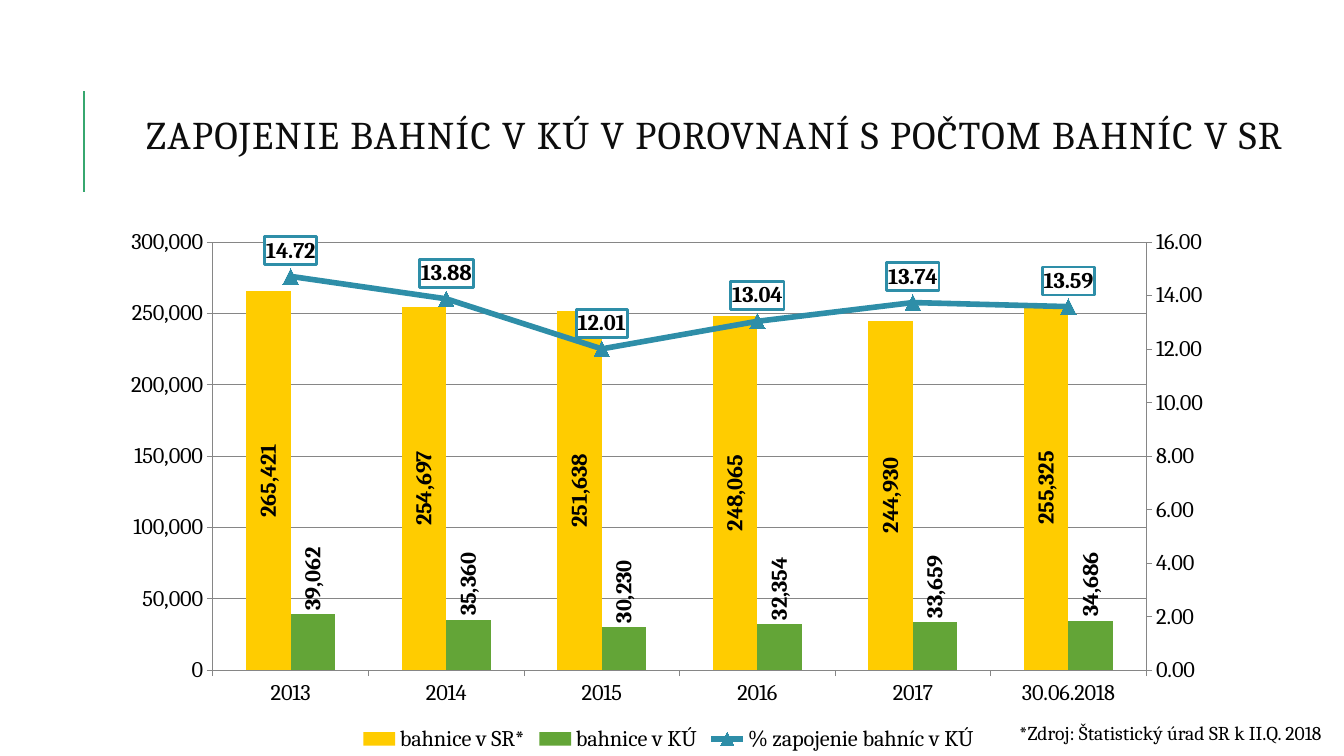
from dataclasses import dataclass
from typing import Optional

from lxml import etree
from pptx import Presentation
from pptx.chart.chart import Chart
from pptx.chart.data import CategoryChartData
from pptx.dml.color import RGBColor
from pptx.enum.chart import XL_CHART_TYPE as ChartType
from pptx.enum.chart import XL_LABEL_POSITION as LabelPos
from pptx.enum.chart import XL_LEGEND_POSITION as LegendPos
from pptx.enum.chart import XL_MARKER_STYLE as Marker
from pptx.enum.chart import XL_TICK_MARK as Tick
from pptx.enum.shapes import MSO_CONNECTOR as Connector
from pptx.enum.text import MSO_ANCHOR as Anchor
from pptx.enum.text import MSO_AUTO_SIZE as AutoSize
from pptx.enum.text import PP_ALIGN as Align
from pptx.oxml import parse_xml
from pptx.oxml.ns import nsdecls, qn
from pptx.util import Inches, Pt


@dataclass(frozen=True)
class Theme:
    font: str = "Cambria"
    title_size: int = 28
    chart_size: int = 16
    note_size: int = 14
    title: str = "0D0D0D"
    text: str = "000000"
    accent: str = "37A76F"
    grid: str = "868686"
    sheep: str = "FFCC00"
    control: str = "63A537"
    share: str = "2E8EA8"
    label_fill: str = "FFFFFF"


@dataclass(frozen=True)
class SeriesSpec:
    name: str
    values: tuple[float, ...]
    color: str
    label_pos: LabelPos
    label_format: str = "#,##0"
    rotation: Optional[int] = None


THEME = Theme()
YEARS = ("2013", "2014", "2015", "2016", "2017", "30.06.2018")
UPRIGHT = -90 * 60000
SERIES = (
    SeriesSpec("bahnice v SR*", (265421, 254697, 251638, 248065, 244930, 255325),
               THEME.sheep, LabelPos.CENTER, rotation=UPRIGHT),
    SeriesSpec("bahnice v KÚ", (39062, 35360, 30230, 32354, 33659, 34686),
               THEME.control, LabelPos.OUTSIDE_END, rotation=UPRIGHT),
    SeriesSpec("% zapojenie bahníc v KÚ", (14.72, 13.88, 12.01, 13.04, 13.74, 13.59),
               THEME.share, LabelPos.ABOVE, "0.00"),
)


def rgb(color: str) -> RGBColor:
    return RGBColor.from_string(color)


def set_font(font, size: int, color: str, bold: bool = False) -> None:
    font.name, font.size, font.bold = THEME.font, Pt(size), bold
    font.color.rgb = rgb(color)


def format_line(line, color: str, width: float) -> None:
    line.color.rgb = rgb(color)
    line.width = Pt(width)


def add_labels(series, spec: SeriesSpec) -> None:
    labels = series.data_labels
    labels.show_value = True
    labels.number_format, labels.number_format_is_linked = spec.label_format, False
    labels.position = spec.label_pos
    set_font(labels.font, THEME.chart_size, THEME.text, bold=True)
    text = labels._element.find(qn("c:txPr"))
    if spec.rotation is not None:
        body = text.find(qn("a:bodyPr"))
        body.set("rot", str(spec.rotation))
        body.set("vert", "horz")
    else:
        text.addprevious(parse_xml(
            f'<c:spPr {nsdecls("c", "a")}><a:solidFill><a:srgbClr val="{THEME.label_fill}"/>'
            f'</a:solidFill><a:ln w="{Pt(2)}"><a:solidFill><a:srgbClr val="{spec.color}"/>'
            '</a:solidFill></a:ln></c:spPr>'))


def move_to_right_axis(chart: Chart) -> None:
    """Turn the last column series into a line on its own axis."""
    ns = nsdecls("c")
    area = chart._chartSpace.chart.plotArea
    bars = area.find(qn("c:barChart"))
    ser = bars.findall(qn("c:ser"))[-1]
    for invert in ser.findall(qn("c:invertIfNegative")):
        ser.remove(invert)
    lines = parse_xml(
        f'<c:lineChart {ns}><c:grouping val="standard"/><c:varyColors val="0"/>'
        '<c:marker val="1"/><c:axId val="5001"/><c:axId val="5002"/></c:lineChart>')
    lines.insert(2, ser)
    bars.addnext(lines)
    cat_axis = parse_xml(
        f'<c:catAx {ns}><c:axId val="5001"/><c:scaling><c:orientation val="minMax"/></c:scaling>'
        '<c:delete val="1"/><c:axPos val="b"/><c:crossAx val="5002"/></c:catAx>')
    val_axis = parse_xml(
        f'<c:valAx {ns}><c:axId val="5002"/><c:scaling><c:orientation val="minMax"/>'
        '<c:max val="16"/><c:min val="0"/></c:scaling><c:delete val="0"/><c:axPos val="r"/>'
        '<c:numFmt formatCode="0.00" sourceLinked="0"/><c:majorTickMark val="out"/>'
        '<c:minorTickMark val="none"/><c:tickLblPos val="nextTo"/><c:crossAx val="5001"/>'
        '<c:crosses val="max"/><c:crossBetween val="between"/><c:majorUnit val="2"/></c:valAx>')
    left_axis = area.find(qn("c:valAx"))
    left_line = left_axis.find(qn("c:spPr"))
    left_axis.addnext(cat_axis)
    cat_axis.addnext(val_axis)
    val_axis.find(qn("c:crossAx")).addprevious(parse_xml(etree.tostring(left_line)))


def set_plot_layout(chart: Chart, x: float, y: float, w: float, h: float) -> None:
    area = chart._chartSpace.chart.plotArea
    for old in area.findall(qn("c:layout")):
        area.remove(old)
    sizes = "".join(f'<c:{key} val="{val}"/>' for key, val in zip("xywh", (x, y, w, h)))
    area.insert(0, parse_xml(
        f'<c:layout {nsdecls("c")}><c:manualLayout><c:layoutTarget val="inner"/>'
        f'<c:xMode val="edge"/><c:yMode val="edge"/>{sizes}</c:manualLayout></c:layout>'))


def add_sheep_chart(s) -> None:
    data = CategoryChartData()
    data.categories = YEARS
    for spec in SERIES:
        data.add_series(spec.name, spec.values, spec.label_format)
    chart = s.shapes.add_chart(ChartType.COLUMN_CLUSTERED, Inches(1.12), Inches(2.19),
                               Inches(11.02), Inches(5.31), data).chart
    chart.has_title = False
    set_font(chart.font, THEME.chart_size, THEME.text)
    chart.has_legend = True
    chart.legend.position = LegendPos.BOTTOM
    chart.legend.include_in_layout = False

    # Axes
    for axis in (chart.category_axis, chart.value_axis):
        axis.major_tick_mark, axis.minor_tick_mark = Tick.OUTSIDE, Tick.NONE
        format_line(axis.format.line, THEME.grid, 0.75)
    values = chart.value_axis
    values.minimum_scale, values.maximum_scale, values.major_unit = 0, 300000, 50000
    values.tick_labels.number_format = "#,##0"
    values.tick_labels.number_format_is_linked = False
    format_line(values.major_gridlines.format.line, THEME.grid, 0.75)
    move_to_right_axis(chart)
    set_plot_layout(chart, 0.09, 0.04, 0.84, 0.8)

    # Series
    bars, lines = chart.plots
    bars.gap_width, bars.vary_by_categories = 150, False
    for series, spec in zip([*bars.series, *lines.series], SERIES):
        add_labels(series, spec)
    for series, spec in zip(bars.series, SERIES):
        series.format.fill.solid()
        series.format.fill.fore_color.rgb = rgb(spec.color)
    share = lines.series[0]
    share.smooth = False
    format_line(share.format.line, THEME.share, 4)
    share.marker.style, share.marker.size = Marker.TRIANGLE, 11
    share.marker.format.fill.solid()
    share.marker.format.fill.fore_color.rgb = rgb(THEME.share)
    format_line(share.marker.format.line, THEME.share, 0.75)


def add_title(s) -> None:
    sp = s.shapes.title
    sp.left, sp.top, sp.width, sp.height = Inches(1.12), Inches(0.87), Inches(11.94), Inches(1)
    tf = sp.text_frame
    tf.text = "ZAPOJENIE BAHNÍC V KÚ V POROVNANÍ S POČTOM BAHNÍC V SR"
    tf.vertical_anchor, tf.auto_size = Anchor.MIDDLE, AutoSize.NONE
    p = tf.paragraphs[0]
    p.alignment, p.line_spacing = Align.CENTER, 0.8
    r = p.runs[0]
    set_font(r.font, THEME.title_size, THEME.title)
    r._r.get_or_add_rPr().set("spc", "100")


def add_accent_line(s) -> None:
    line = s.shapes.add_connector(Connector.STRAIGHT, Inches(0.83), Inches(1.9),
                                  Inches(0.83), Inches(0.9))
    format_line(line.line, THEME.accent, 1.5)
    etree.SubElement(line._element.spPr, qn("a:effectLst"))


def add_source_note(s) -> None:
    tf = s.shapes.add_textbox(Inches(10.01), Inches(7.1), Inches(3.4), Inches(0.34)).text_frame
    tf.text = "*Zdroj: Štatistický úrad SR k II.Q. 2018"
    tf.word_wrap, tf.auto_size = False, AutoSize.SHAPE_TO_FIT_TEXT
    set_font(tf.paragraphs[0].runs[0].font, THEME.note_size, THEME.text)


# Slide
prs = Presentation()
prs.slide_width, prs.slide_height = Inches(13.33), Inches(7.5)
s = prs.slides.add_slide(prs.slide_layouts[5])
add_accent_line(s)
add_title(s)
add_sheep_chart(s)
add_source_note(s)
prs.save("out.pptx")
